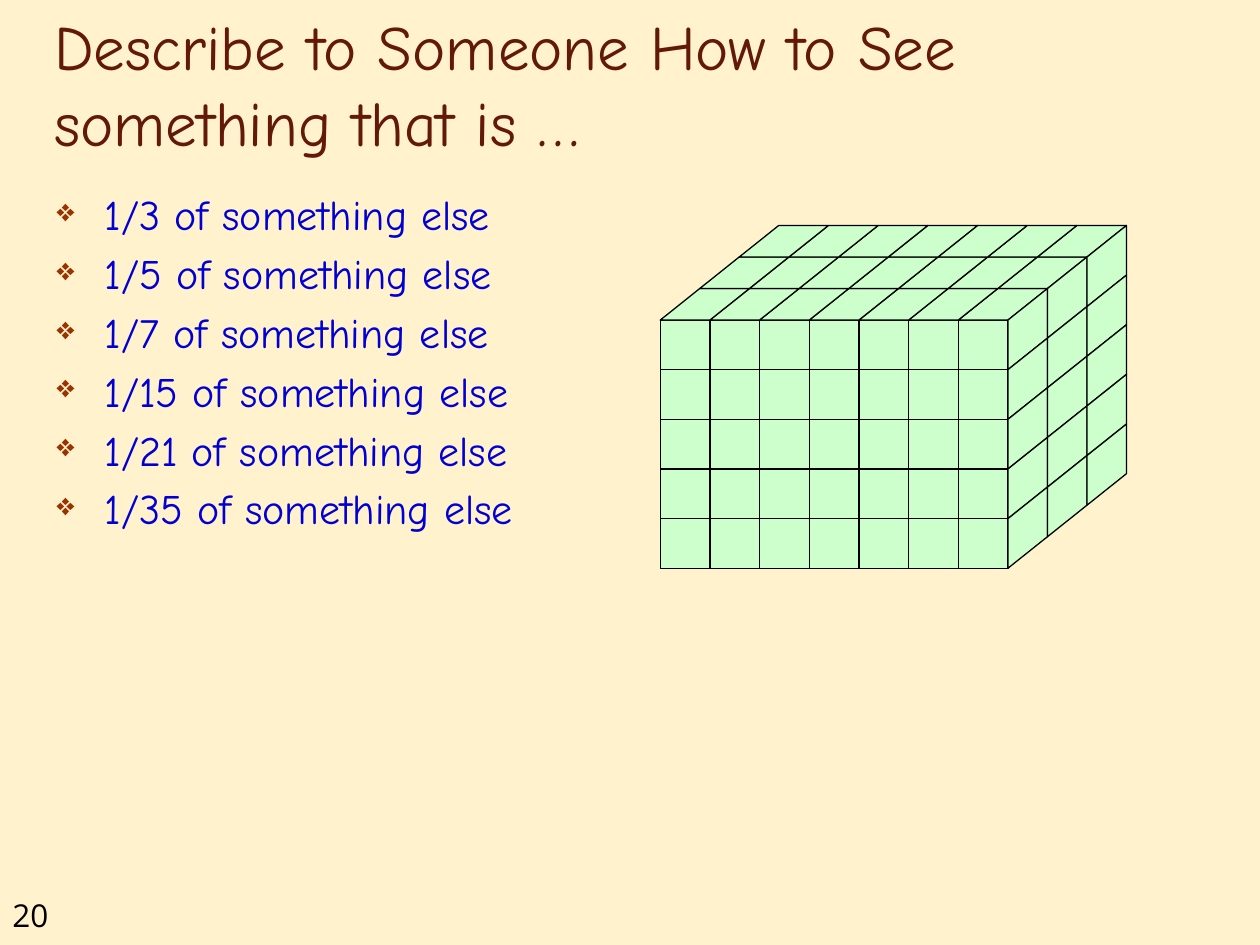
"""Build a slide about fractions hidden in a 7 by 5 by 3 block of cubes."""
from dataclasses import dataclass
from typing import Any

from lxml.etree import SubElement
from pptx import Presentation
from pptx.dml.color import RGBColor
from pptx.enum.shapes import MSO_SHAPE
from pptx.enum.text import MSO_ANCHOR
from pptx.oxml.ns import qn
from pptx.util import Inches, Pt

GRID = 0.25
COLUMNS, ROWS, LAYERS = 7, 5, 3
BLOCK_LEFT, BLOCK_TOP = 20.96, 10.16
CELL_WIDTH, CELL_HEIGHT = 11.04 / COLUMNS, 7.88 / ROWS
SHIFT, RISE = 3.76 / LAYERS, 1


def color(value):
    return RGBColor.from_string(value)


def place(*lengths):
    return [Inches(length * GRID) for length in lengths]


def write(para, text, font="Comic Neue", size=24, ink="000000"):
    span = para.add_run()
    span.text = text
    span.font.name, span.font.size = font, Pt(size)
    span.font.color.rgb = color(ink)


def add_bullet(para, symbol, ink, percent, indent):
    props = para._p.get_or_add_pPr()
    props.set("marL", str(Inches(indent)))
    props.set("indent", str(-Inches(indent)))
    SubElement(SubElement(props, qn("a:buClr")), qn("a:srgbClr"), val=ink)
    SubElement(props, qn("a:buSzPct"), val=str(percent * 1000))
    SubElement(props, qn("a:buChar"), char=symbol)


@dataclass
class Sheet:
    page: Any
    back: str = "FFF2CC"
    heading: str = "631908"
    ink: str = "0000D4"
    bullet: str = "993300"
    face: str = "CCFFCC"
    edge: str = "000000"

    def background(self):
        fill = self.page.background.fill
        fill.solid()
        fill.fore_color.rgb = color(self.back)

    def title(self, text, *bounds):
        box = self.page.shapes.title
        box.left, box.top, box.width, box.height = place(*bounds)
        frame = box.text_frame
        frame.word_wrap = True
        frame.vertical_anchor = MSO_ANCHOR.BOTTOM
        para = frame.paragraphs[0]
        para.alignment = 1
        write(para, text, size=36, ink=self.heading)

    def text_box(self, *bounds):
        frame = self.page.shapes.add_textbox(*place(*bounds)).text_frame
        frame.word_wrap = True
        return frame

    def number(self, text, *bounds):
        frame = self.text_box(*bounds)
        write(frame.paragraphs[0], text, font="Open Sans", size=18)

    def bullets(self, lines, *bounds):
        frame = self.text_box(*bounds)
        for index, line in enumerate(lines):
            para = frame.add_paragraph() if index else frame.paragraphs[0]
            para.space_before = Pt(4.8)
            add_bullet(para, "❖", self.bullet, 75, 0.38)
            write(para, line, ink=self.ink)

    def group(self):
        return self.page.shapes.add_group_shape()

    def tile(self, group, preset, *bounds, slant=None):
        shape = group.shapes.add_shape(preset, *place(*bounds))
        shape.shadow.inherit = False
        shape.fill.solid()
        shape.fill.fore_color.rgb = color(self.face)
        shape.line.color.rgb = color(self.edge)
        shape.line.width = Pt(0.75)
        if slant is not None:
            shape.adjustments[0] = slant
        return shape

    def front(self):
        group = self.group()
        for row in reversed(range(ROWS)):
            for column in range(COLUMNS):
                self.tile(group, MSO_SHAPE.RECTANGLE,
                          BLOCK_LEFT + column * CELL_WIDTH,
                          BLOCK_TOP + row * CELL_HEIGHT,
                          CELL_WIDTH, CELL_HEIGHT)

    def top(self):
        for layer in range(LAYERS):
            group = self.group()
            for column in reversed(range(COLUMNS)):
                self.tile(group, MSO_SHAPE.PARALLELOGRAM,
                          BLOCK_LEFT + column * CELL_WIDTH + layer * SHIFT,
                          BLOCK_TOP - (layer + 1) * RISE,
                          CELL_WIDTH + SHIFT, RISE, slant=SHIFT / RISE)

    def side(self):
        length = CELL_HEIGHT + RISE
        for row in range(ROWS):
            group = self.group()
            for layer in range(LAYERS):
                center = BLOCK_LEFT + COLUMNS * CELL_WIDTH + (layer + 0.5) * SHIFT
                middle = BLOCK_TOP + row * CELL_HEIGHT - (layer + 1) * RISE + length / 2
                shape = self.tile(group, MSO_SHAPE.PARALLELOGRAM,
                                  center - length / 2, middle - SHIFT / 2,
                                  length, SHIFT, slant=RISE / SHIFT)
                shape.rotation = 270
                shape.element.spPr.get_or_add_xfrm().set("flipV", "1")


def main():
    deck = Presentation()
    deck.slide_width, deck.slide_height = place(40, 30)
    sheet = Sheet(deck.slides.add_slide(deck.slide_layouts[5]))
    sheet.background()
    sheet.number("20", 0, 28.24, 3, 1.6)
    sheet.title("Describe to Someone How to See something that is …",
                1.32, 0.68, 34, 4.56)
    sheet.bullets([f"1/{part} of something else" for part in (3, 5, 7, 15, 21, 35)],
                  1.4, 5.8, 18.88, 18)
    sheet.front()
    sheet.top()
    sheet.side()
    deck.save("out.pptx")


if __name__ == "__main__":
    main()
